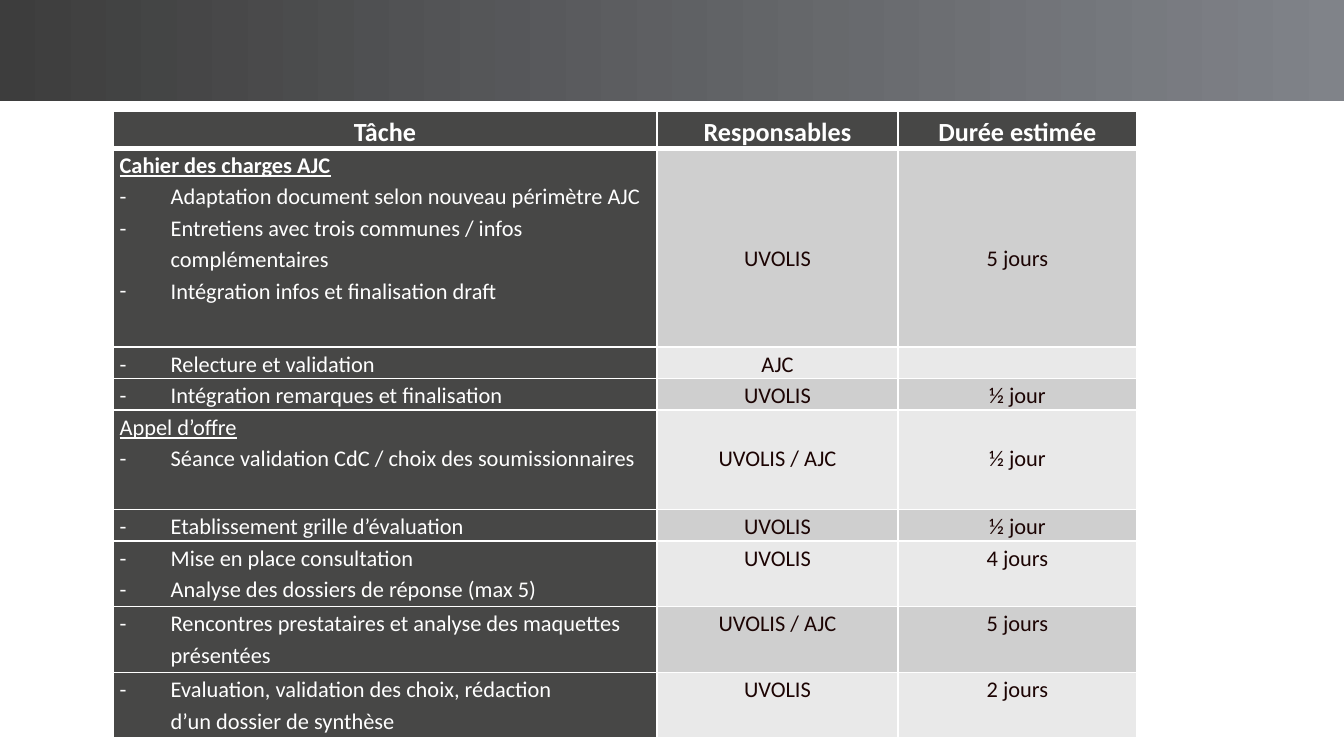
import lxml.etree
import pptx
import pptx.dml.color
import pptx.enum.shapes
import pptx.enum.text
import pptx.oxml.ns
import pptx.util

Inches = pptx.util.Inches
Pt = pptx.util.Pt
CENTER = pptx.enum.text.PP_ALIGN.CENTER

DARK, WHITE, INK = "474746", "FFFFFF", "1C0403"
BANDS = ("CFCFCF", "E9E9E9")
FONT = "Calibri"
LINE = 0.23
HEADINGS = ("Tâche", "Responsables", "Durée estimée")
COLUMN_WIDTHS = (4.05, 1.79, 1.78)
HEADER_HEIGHT = 0.27
MAIN_TITLE = "Cahier des charges AJC"
ROWS = (
    (1.48, MAIN_TITLE, (
        "Adaptation document selon nouveau périmètre AJC",
        "Entretiens avec trois communes / infos complémentaires",
        "Intégration infos et finalisation draft"), "UVOLIS", "5 jours", 3),
    (LINE, "", ("Relecture et validation",), "AJC", "", 0),
    (LINE, "", ("Intégration remarques et finalisation",), "UVOLIS", "½ jour", 0),
    (0.74, "Appel d’offre", ("Séance validation CdC / choix des soumissionnaires",),
     "UVOLIS / AJC", "½ jour", 1),
    (LINE, "", ("Etablissement grille d’évaluation",), "UVOLIS", "½ jour", 0),
    (0.49, "", ("Mise en place consultation", "Analyse des dossiers de réponse (max 5)"),
     "UVOLIS", "4 jours", 0),
    (0.49, "", ("Rencontres prestataires et analyse des maquettes présentées",),
     "UVOLIS / AJC", "5 jours", 0),
    (0.49, "", ("Evaluation, validation des choix, rédaction\nd’un dossier de synthèse",),
     "UVOLIS", "2 jours", 0),
)


def rgb(value):
    """Turn a hex string into a colour."""
    return pptx.dml.color.RGBColor.from_string(value)


def add_element(parent, tag, **attributes):
    """Append a DrawingML element and return it."""
    return lxml.etree.SubElement(parent, pptx.oxml.ns.qn(tag), attributes)


def format_cell(cell, fill, top=1, bottom=1, skipped=0):
    """Set the margins, borders and fill of a cell, skipping lines at its top."""
    cell.margin_left = cell.margin_right = Inches(0.05)
    cell.margin_top, cell.margin_bottom = Inches(skipped * LINE), 0
    properties = cell._tc.get_or_add_tcPr()
    for side, width in (("L", 1), ("R", 1), ("T", top), ("B", bottom)):
        border = add_element(properties, f"a:ln{side}", w=str(Pt(width)))
        add_element(add_element(border, "a:solidFill"), "a:srgbClr", val=WHITE)
    cell.fill.solid()
    cell.fill.fore_color.rgb = rgb(fill)


def write_paragraph(para, text, color, size=12, bold=False, underline=False, align=None):
    """Write one formatted paragraph."""
    para.text = text
    para.line_spacing = 1.15
    para.alignment = align
    for span in para.runs:
        span.font.name = FONT
        span.font.size = Pt(size)
        span.font.bold = bold
        span.font.underline = underline
        span.font.color.rgb = rgb(color)
    if not text:
        add_element(para._p, "a:endParaRPr", sz=str(size * 100))


def add_dash(para):
    """Give a paragraph a hanging dash."""
    properties = para._p.get_or_add_pPr()
    properties.set("marL", str(Inches(0.38)))
    properties.set("indent", str(Inches(-0.38)))
    add_element(properties, "a:buFont", typeface=FONT)
    add_element(properties, "a:buChar", char="-")


def write_tasks(cell, title, tasks):
    """Fill a task cell with an optional title and dashed tasks."""
    frame = cell.text_frame
    lines = ([title] if title else []) + list(tasks)
    for index, line in enumerate(lines):
        para = frame.add_paragraph() if index else frame.paragraphs[0]
        write_paragraph(para, line, WHITE, bold=line == MAIN_TITLE, underline=line == title)
        if line != title:
            add_dash(para)


def add_banner(page, left, top, width, height):
    """Draw the gradient band across the top."""
    banner = page.shapes.add_shape(
        pptx.enum.shapes.MSO_SHAPE.RECTANGLE,
        Inches(left), Inches(top), Inches(width), Inches(height))
    banner.shadow.inherit = False
    banner.line.fill.background()
    banner.fill.gradient()
    banner.fill.gradient_angle = 0
    for stop, color in zip(banner.fill.gradient_stops, ("3D3D3D", "808389")):
        stop.color.rgb = rgb(color)


def add_schedule(page, left, top, width, height):
    """Build the table of tasks, owners and durations."""
    table = page.shapes.add_table(
        len(ROWS) + 1, len(HEADINGS),
        Inches(left), Inches(top), Inches(width), Inches(height)).table
    for column, share in zip(table.columns, COLUMN_WIDTHS):
        column.width = Inches(width * share / sum(COLUMN_WIDTHS))
    table.rows[0].height = Inches(HEADER_HEIGHT)
    for index, heading in enumerate(HEADINGS):
        cell = table.cell(0, index)
        format_cell(cell, DARK, bottom=3)
        write_paragraph(cell.text_frame.paragraphs[0], heading, WHITE, 14, True, align=CENTER)
    for index, (row_height, title, tasks, owner, duration, skipped) in enumerate(ROWS):
        row = table.rows[index + 1]
        row.height = Inches(row_height)
        border = 1 if index else 3
        task_cell, *detail_cells = row.cells
        format_cell(task_cell, DARK, border)
        write_tasks(task_cell, title, tasks)
        for cell, text in zip(detail_cells, (owner, duration)):
            format_cell(cell, BANDS[index % 2], border, skipped=skipped)
            write_paragraph(cell.text_frame.paragraphs[0], text, INK, align=CENTER)


def main():
    """Build and save the deck."""
    deck = pptx.Presentation()
    deck.slide_width = Inches(10)
    deck.slide_height = deck.slide_width * 9 // 16
    page = deck.slides.add_slide(deck.slide_layouts[6])
    add_banner(page, 0, 0, 10, 0.75)
    add_schedule(page, 0.84, 0.83, 7.62, 4.65)
    deck.save("out.pptx")


if __name__ == "__main__":
    main()
